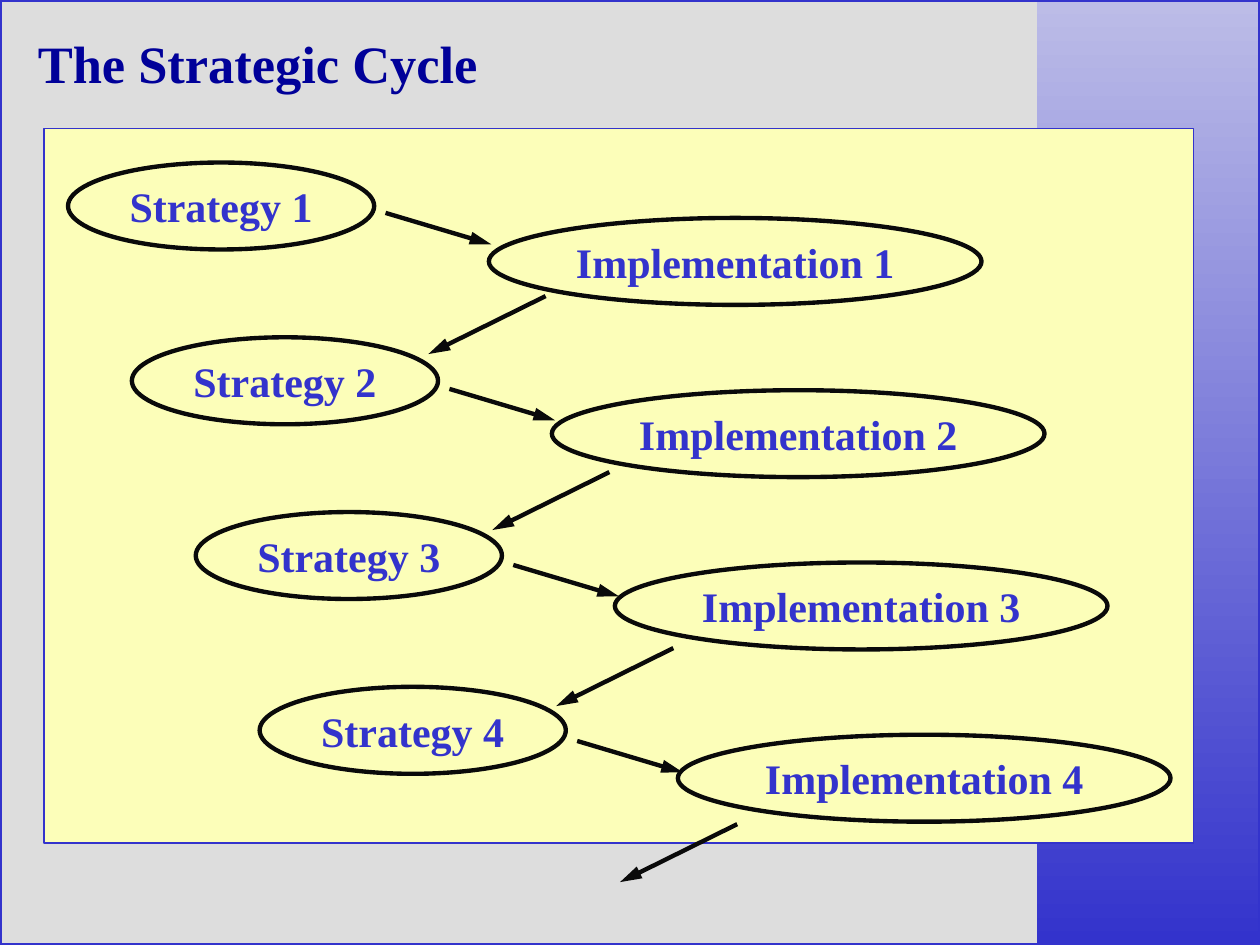
from dataclasses import dataclass

from lxml.etree import SubElement
from pptx import Presentation
from pptx.dml.color import RGBColor
from pptx.enum.shapes import MSO_CONNECTOR, MSO_SHAPE
from pptx.enum.text import MSO_ANCHOR, PP_ALIGN
from pptx.oxml.ns import qn
from pptx.util import Inches, Pt

GREY = RGBColor(0xDD, 0xDD, 0xDD)
PALE_BLUE = RGBColor(0xBC, 0xBC, 0xE7)
BLUE = RGBColor(0x33, 0x33, 0xCC)
NAVY = RGBColor(0x00, 0x00, 0x99)
CREAM = RGBColor(0xFC, 0xFE, 0xB9)
BLACK = RGBColor(0x0A, 0x0A, 0x0A)
FONT = "Times New Roman"
ROUNDS = 4
OVAL_HEIGHT = 0.69


@dataclass(frozen=True)
class Stage:
    """An oval that moves down and right with each round."""
    name: str
    left: float
    top: float
    width: float
    step_x: float
    step_y: float


@dataclass(frozen=True)
class Arrow:
    """An arrow of the first round, given by its two ends."""
    start: tuple[float, float]
    end: tuple[float, float]


STAGES = (
    Stage("Strategy", 0.54, 1.29, 2.43, 0.507, 1.387),
    Stage("Implementation", 3.88, 1.73, 3.91, 0.5, 1.367),
)
ARROWS = (
    Arrow((3.06, 1.69), (3.9, 1.94)),
    Arrow((4.33, 2.35), (3.4, 2.81)),
)
ARROW_STEP_X, ARROW_STEP_Y = 0.507, 1.397


def add_plain_shape(page, kind, left: float, top: float, width: float, height: float,
                    line_color: RGBColor | None = None, line_width: float = 0):
    """Add an unfilled shape without shadow, outlined if a colour is given."""
    shape = page.shapes.add_shape(
        kind, Inches(left), Inches(top), Inches(width), Inches(height))
    shape.shadow.inherit = False
    shape.fill.background()
    if line_color is None:
        shape.line.fill.background()
    else:
        shape.line.color.rgb = line_color
        shape.line.width = Pt(line_width)
    return shape


def format_paragraph(para, size: int, color: RGBColor, alignment: PP_ALIGN) -> None:
    para.alignment = alignment
    para.font.name = FONT
    para.font.size = Pt(size)
    para.font.bold = True
    para.font.color.rgb = color


def add_stage(page, stage: Stage, index: int) -> None:
    oval = add_plain_shape(
        page, MSO_SHAPE.OVAL, stage.left + index * stage.step_x,
        stage.top + index * stage.step_y, stage.width, OVAL_HEIGHT, BLACK, 2.5)
    frame = oval.text_frame
    frame.text = f"{stage.name} {index + 1}"
    frame.word_wrap = False
    frame.vertical_anchor = MSO_ANCHOR.MIDDLE
    format_paragraph(frame.paragraphs[0], 24, BLUE, PP_ALIGN.CENTER)


def add_arrow(page, arrow: Arrow, index: int) -> None:
    shift_x, shift_y = index * ARROW_STEP_X, index * ARROW_STEP_Y
    ends = [Inches(value) for x, y in (arrow.start, arrow.end)
            for value in (x + shift_x, y + shift_y)]
    connector = page.shapes.add_connector(MSO_CONNECTOR.STRAIGHT, *ends)
    connector.line.color.rgb = BLACK
    connector.line.width = Pt(2.5)
    SubElement(connector.line._get_or_add_ln(), qn("a:tailEnd"),
               type="triangle", w="med", len="lg")
    SubElement(connector._element.spPr, qn("a:effectLst"))


def add_title(page, text: str) -> None:
    title = page.shapes.title
    title.left, title.top = Inches(0), Inches(0)
    title.width, title.height = Inches(10), Inches(1)
    frame = title.text_frame
    frame.text = text
    frame.word_wrap = False
    frame.vertical_anchor = MSO_ANCHOR.MIDDLE
    frame.margin_left, frame.margin_right = Inches(0.3), Inches(4.35)
    frame.margin_top = frame.margin_bottom = Inches(0.05)
    format_paragraph(frame.paragraphs[0], 30, NAVY, PP_ALIGN.LEFT)


def add_backdrop(page) -> None:
    page.background.fill.solid()
    page.background.fill.fore_color.rgb = GREY

    # Gradient band on the right, light at the top
    band = add_plain_shape(page, MSO_SHAPE.RECTANGLE, 8.23, 0, 1.77, 7.5)
    band.fill.gradient()
    band.fill.gradient_angle = 270
    for stop, color, position in zip(band.fill.gradient_stops, (PALE_BLUE, BLUE), (0, 1)):
        stop.color.rgb = color
        stop.position = position

    # Page border and diagram panel
    add_plain_shape(page, MSO_SHAPE.RECTANGLE, 0, 0, 10, 7.5, BLUE, 2)
    panel = add_plain_shape(page, MSO_SHAPE.RECTANGLE, 0.35, 1.02, 9.12, 5.67, BLUE, 0.75)
    panel.fill.solid()
    panel.fill.fore_color.rgb = CREAM


def main() -> None:
    deck = Presentation()
    deck.slide_width, deck.slide_height = Inches(10), Inches(7.5)
    page = deck.slides.add_slide(deck.slide_layouts[5])
    add_backdrop(page)
    add_title(page, "The Strategic Cycle")

    # Ovals first, then the arrows that link them
    for stage in STAGES:
        for index in range(ROUNDS):
            add_stage(page, stage, index)
    for index in range(ROUNDS):
        for arrow in ARROWS:
            add_arrow(page, arrow, index)

    deck.save("out.pptx")


if __name__ == "__main__":
    main()
